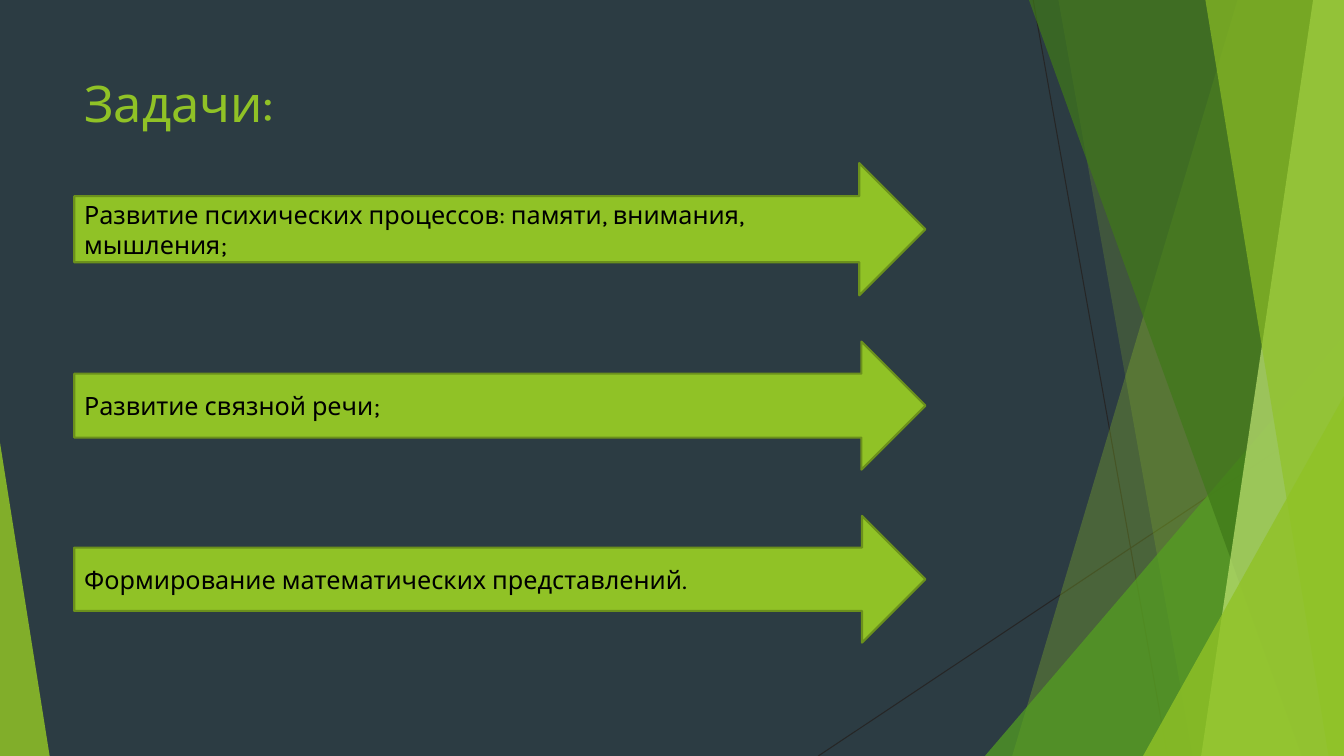
"""Build the slide listing three developmental tasks."""
from lxml.etree import SubElement
from pptx import Presentation
from pptx.dml.color import RGBColor
from pptx.enum.shapes import MSO_CONNECTOR, MSO_SHAPE
from pptx.enum.text import MSO_ANCHOR, PP_ALIGN
from pptx.oxml.ns import qn
from pptx.util import Pt

FONT = "Karla"
WIDTH, HEIGHT = 960, 540
COLORS = {
    "background": "2C3C43",
    "ray": "262626",
    "lime": "90C226",
    "green": "54A021",
    "forest": "3F7819",
    "pale": "C0E474",
    "outline": "6B901C",
    "text": "000000",
}
TASKS = [
    ("Развитие психических процессов: памяти, внимания, мышления;", 116.5, 94.5),
    ("Развитие связной речи;", 244, 91.5),
    ("Формирование математических представлений.", 368.5, 90.5),
]


def color(name):
    return RGBColor.from_string(COLORS[name])


def fill_facet(facet, fill, opacity):
    facet.shadow.inherit = False
    facet.fill.solid()
    facet.fill.fore_color.rgb = color(fill)
    facet.line.fill.background()
    tint = facet.fill._xPr.find(qn("a:solidFill"))[0]
    SubElement(tint, qn("a:alpha"), val=str(opacity * 1000))


def add_ray(slide, start, end):
    ray = slide.shapes.add_connector(
        MSO_CONNECTOR.STRAIGHT, *map(Pt, start + end))
    ray.line.color.rgb = color("ray")
    ray.line.width = Pt(0.75)
    SubElement(ray._element.spPr, qn("a:effectLst"))


def add_band(slide, top_left, bottom_left, fill, opacity):
    outline = slide.shapes.build_freeform(top_left, 0, scale=Pt(1))
    outline.add_line_segments(
        [(WIDTH, 0), (WIDTH, HEIGHT), (bottom_left, HEIGHT)], close=True)
    fill_facet(outline.convert_to_shape(), fill, opacity)


def add_corner(slide, left, top, width, apex, fill, opacity):
    corner = slide.shapes.add_shape(
        MSO_SHAPE.ISOSCELES_TRIANGLE,
        Pt(left), Pt(top), Pt(width), Pt(HEIGHT - top))
    corner.adjustments[0] = apex
    fill_facet(corner, fill, opacity)


def add_backdrop(slide):
    slide.background.fill.solid()
    slide.background.fill.fore_color.rgb = color("background")
    add_ray(slide, (738, 0), (834, HEIGHT))
    add_ray(slide, (WIDTH, 290), (584.5, HEIGHT))
    add_band(slide, 884, 723, "lime", 30)
    add_band(slide, 756, 852, "lime", 20)
    add_corner(slide, 703.5, 240, 256.5, 1, "green", 72)
    add_band(slide, 735, 929.5, "forest", 70)
    add_band(slide, 938, 858, "pale", 70)
    add_band(slide, 861, 949, "lime", 65)
    add_corner(slide, 816.5, 283, 143.5, 1, "lime", 80)
    add_corner(slide, 0, 316, 35.5, 0, "lime", 85)


def format_text(frame, text, size, ink):
    frame.text = text
    frame.word_wrap = True
    paragraph = frame.paragraphs[0]
    paragraph.alignment = PP_ALIGN.LEFT
    paragraph.font.name = FONT
    paragraph.font.size = Pt(size)
    paragraph.font.color.rgb = color(ink)


def set_title(slide, text):
    title = slide.shapes.title
    title.left, title.top, title.width, title.height = map(
        Pt, (53, 48, 677, 104))
    format_text(title.text_frame, text, 36, "lime")
    title.text_frame.vertical_anchor = MSO_ANCHOR.TOP


def add_task(slide, text, top, height):
    arrow = slide.shapes.add_shape(
        MSO_SHAPE.RIGHT_ARROW, Pt(53), Pt(top), Pt(608), Pt(height))
    arrow.shadow.inherit = False
    arrow.fill.solid()
    arrow.fill.fore_color.rgb = color("lime")
    arrow.line.color.rgb = color("outline")
    arrow.line.width = Pt(1.5)
    format_text(arrow.text_frame, text, 18, "text")
    arrow.text_frame.vertical_anchor = MSO_ANCHOR.MIDDLE


def main():
    deck = Presentation()
    deck.slide_width, deck.slide_height = Pt(WIDTH), Pt(HEIGHT)
    slide = deck.slides.add_slide(deck.slide_layouts[5])
    add_backdrop(slide)
    set_title(slide, "Задачи:")
    for text, top, height in TASKS:
        add_task(slide, text, top, height)
    deck.save("out.pptx")


if __name__ == "__main__":
    main()
